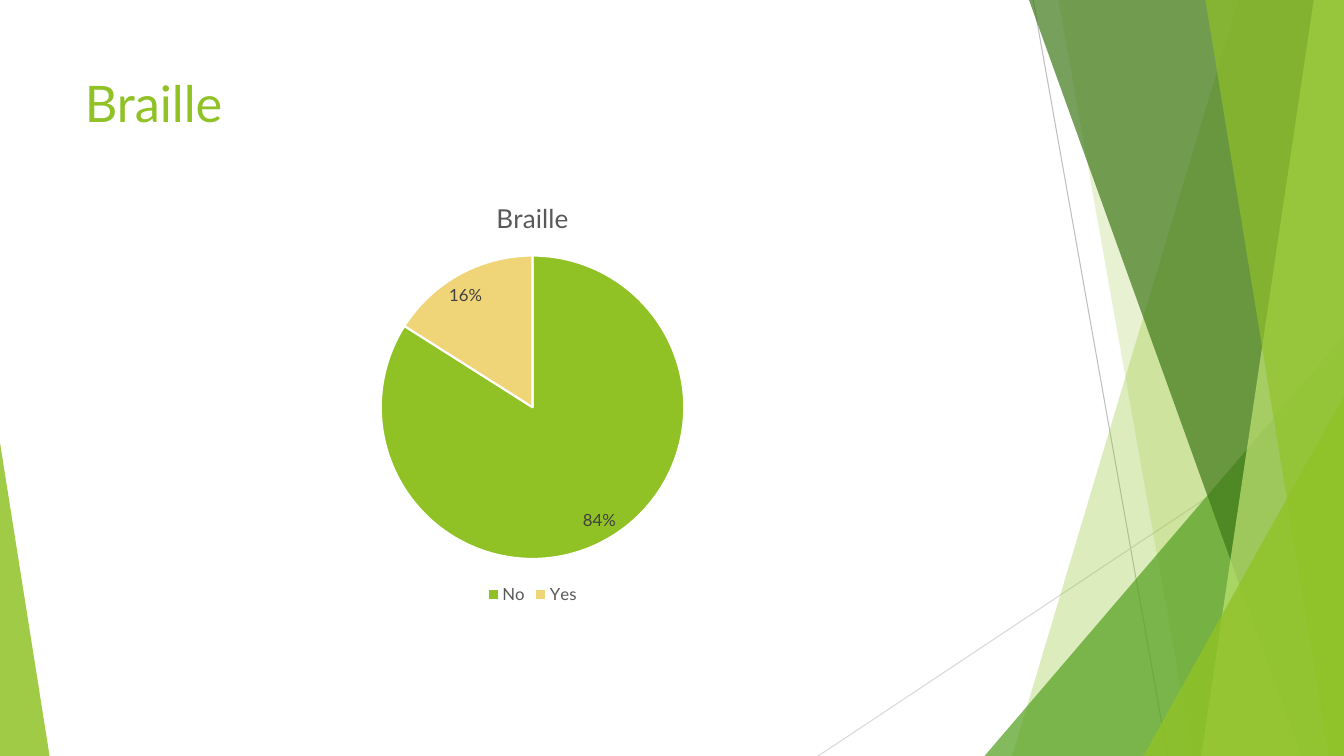
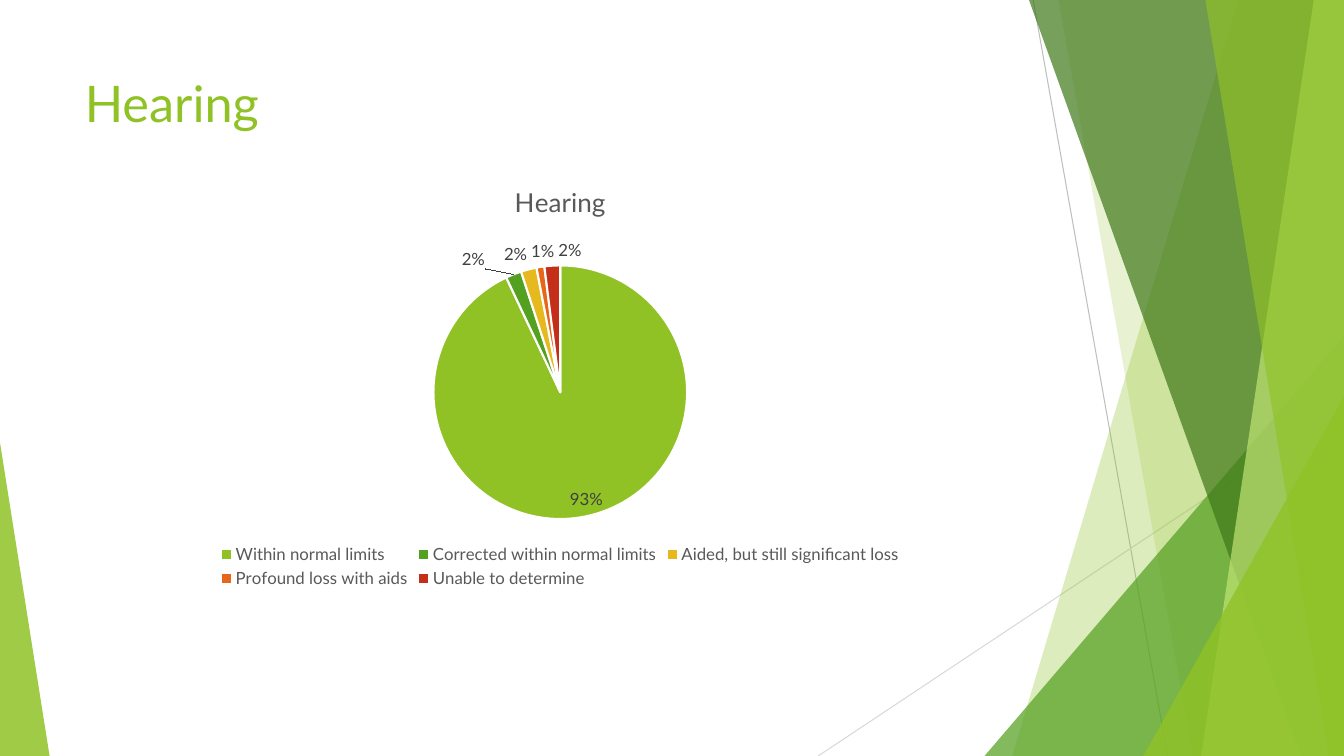
"""Build two survey slides with pie charts over a faceted green layout."""
from dataclasses import dataclass

from lxml import etree
from pptx import Presentation
from pptx.chart.data import CategoryChartData
from pptx.dml.color import RGBColor
from pptx.enum.chart import XL_CHART_TYPE, XL_LABEL_POSITION, XL_LEGEND_POSITION
from pptx.enum.shapes import MSO_CONNECTOR, MSO_SHAPE
from pptx.enum.text import MSO_ANCHOR, MSO_AUTO_SIZE, PP_ALIGN
from pptx.oxml.ns import qn
from pptx.util import Emu, Inches, Pt

PIE = XL_CHART_TYPE.PIE
BEST_FIT = XL_LABEL_POSITION.BEST_FIT
LEGEND_BOTTOM = XL_LEGEND_POSITION.BOTTOM
STRAIGHT = MSO_CONNECTOR.STRAIGHT
TRIANGLE = MSO_SHAPE.ISOSCELES_TRIANGLE
TOP = MSO_ANCHOR.TOP
NO_FIT = MSO_AUTO_SIZE.NONE
LEFT = PP_ALIGN.LEFT

COLS, ROWS = 160, 90
WIDTH, HEIGHT = Inches(13.33), Inches(7.5)
TITLE_ONLY = 5

WHITE = RGBColor(0xFF, 0xFF, 0xFF)
BLACK = RGBColor(0x00, 0x00, 0x00)
LIME = RGBColor(0x90, 0xC2, 0x26)
PALE_LIME = RGBColor(0xC0, 0xE4, 0x74)
GREEN = RGBColor(0x54, 0xA0, 0x21)
DARK_GREEN = RGBColor(0x3F, 0x78, 0x19)
SAND = RGBColor(0xF0, 0xD5, 0x78)
GOLD = RGBColor(0xE6, 0xB9, 0x1E)
ORANGE = RGBColor(0xE7, 0x66, 0x18)
RED = RGBColor(0xC4, 0x2F, 0x1A)
GREY = RGBColor(0x59, 0x59, 0x59)
DARK_GREY = RGBColor(0x40, 0x40, 0x40)
LINE_GREY = RGBColor(0xBF, 0xBF, 0xBF)
LIGHT_GREY = RGBColor(0xD9, 0xD9, 0xD9)

BASE_FONT = {"name": "Lato", "bold": False}
TITLE_FONT = BASE_FONT | {"size": Pt(36)}
CHART_FONT = BASE_FONT | {"size": Pt(10)}
CHART_TITLE_FONT = BASE_FONT | {"size": Pt(18.6)}
LABEL_FONT = BASE_FONT | {"size": Pt(12)}
TITLE_FRAME = {"vertical_anchor": TOP, "auto_size": NO_FIT, "word_wrap": True}
TITLE_BOX = (8.9, 8, 112.8, 17.3)
CHART_SIZE = (112.8, 50.9)


@dataclass(frozen=True)
class Ray:
    start: tuple[float, float]
    end: tuple[float, float]
    color: RGBColor


@dataclass(frozen=True)
class Band:
    top_col: float
    bottom_col: float
    color: RGBColor
    opacity: int


@dataclass(frozen=True)
class Wedge:
    left: float
    right: float
    top: float
    apex: int
    color: RGBColor
    opacity: int


@dataclass(frozen=True)
class Pie:
    title: str
    left: float
    top: float
    slices: tuple[tuple[str, int, RGBColor], ...]


FACETS = (
    Ray((123, 0), (139, ROWS), LINE_GREY),
    Ray((COLS, 48.4), (97.4, ROWS), LIGHT_GREY),
    Band(147.4, 120.5, LIME, 30),
    Band(126, 142, LIME, 20),
    Wedge(117.2, COLS, 40, 1, GREEN, 72),
    Band(122.5, 154.9, DARK_GREEN, 70),
    Band(156.4, 143, PALE_LIME, 70),
    Band(143.5, 158.2, LIME, 65),
    Wedge(136.1, COLS, 47.2, 1, LIME, 80),
    Wedge(0, 5.9, 52.7, 0, LIME, 85),
)

PIES = (
    Pie("Braille", 7, 21.5, (("No", 84, LIME), ("Yes", 16, SAND))),
    Pie("Hearing", 10.3, 19.6, (
        ("Within normal limits", 93, LIME),
        ("Corrected within normal limits", 2, GREEN),
        ("Aided, but still significant loss", 2, GOLD),
        ("Profound loss with aids", 1, ORANGE),
        ("Unable to determine", 2, RED),
    )),
)


def col(n: float) -> Emu:
    return Emu(round(WIDTH * n / COLS))


def row(n: float) -> Emu:
    return Emu(round(HEIGHT * n / ROWS))


def box(left: float, top: float, width: float, height: float) -> tuple:
    return col(left), row(top), col(width), row(height)


def apply(target, values: dict) -> None:
    for name, value in values.items():
        setattr(target, name, value)


def set_font(font, values: dict, color: RGBColor) -> None:
    apply(font, values)
    font.color.rgb = color


def paint(sp, color: RGBColor, opacity: int) -> None:
    sp.shadow.inherit = False
    sp.fill.solid()
    sp.fill.fore_color.rgb = color
    sp.line.fill.background()
    clr = sp.element.spPr.find(f"{qn('a:solidFill')}/{qn('a:srgbClr')}")
    etree.SubElement(clr, qn("a:alpha"), val=str(opacity * 1000))


def draw_ray(shapes, ray: Ray):
    (x1, y1), (x2, y2) = ray.start, ray.end
    line = shapes.add_connector(STRAIGHT, col(x1), row(y1), col(x2), row(y2))
    line.line.color.rgb = ray.color
    line.line.width = Pt(0.75)
    etree.SubElement(line.element.spPr, qn("a:effectLst"))
    return line


def draw_band(shapes, band: Band):
    builder = shapes.build_freeform(col(band.top_col), 0)
    builder.add_line_segments(
        [(WIDTH, 0), (WIDTH, HEIGHT), (col(band.bottom_col), HEIGHT)], close=True)
    sp = builder.convert_to_shape()
    paint(sp, band.color, band.opacity)
    return sp


def draw_wedge(shapes, wedge: Wedge):
    area = box(wedge.left, wedge.top, wedge.right - wedge.left, ROWS - wedge.top)
    sp = shapes.add_shape(TRIANGLE, *area)
    sp.adjustments[0] = wedge.apex
    paint(sp, wedge.color, wedge.opacity)
    return sp


DRAW = {Ray: draw_ray, Band: draw_band, Wedge: draw_wedge}


def prepare_layout(layout) -> None:
    for ph in list(layout.placeholders):
        if ph.placeholder_format.idx:
            ph.element.getparent().remove(ph.element)
        else:
            ph.left, ph.top, ph.width, ph.height = box(*TITLE_BOX)


def move_facets(slide, layout) -> None:
    facets = [DRAW[type(facet)](slide.shapes, facet) for facet in FACETS]
    for sp in facets:
        layout.shapes.element.append(sp.element)


def add_title(slide, text: str) -> None:
    tf = slide.shapes.title.text_frame
    apply(tf, TITLE_FRAME)
    p = tf.paragraphs[0]
    p.alignment = LEFT
    r = p.add_run()
    r.text = text
    set_font(r.font, TITLE_FONT, LIME)


def add_pie(slide, pie: Pie) -> None:
    names, values, colors = zip(*pie.slices)
    data = CategoryChartData()
    data.categories = names
    data.add_series(pie.title, values)
    area = box(pie.left, pie.top, *CHART_SIZE)
    chart = slide.shapes.add_chart(PIE, *area, data).chart
    set_font(chart.font, CHART_FONT, BLACK)

    chart.has_title = True
    r = chart.chart_title.text_frame.paragraphs[0].add_run()
    r.text = pie.title
    set_font(r.font, CHART_TITLE_FONT, GREY)

    chart.has_legend = True
    apply(chart.legend, {"position": LEGEND_BOTTOM, "include_in_layout": False})
    set_font(chart.legend.font, LABEL_FONT, GREY)

    plot = chart.plots[0]
    plot.vary_by_categories = True
    series = plot.series[0]
    for i, color in enumerate(colors):
        fmt = series.points[i].format
        fmt.fill.solid()
        fmt.fill.fore_color.rgb = color
        fmt.line.color.rgb = WHITE
        fmt.line.width = Pt(1.5)

    labels = series.data_labels
    apply(labels, {"show_value": False, "show_percentage": True,
                   "number_format": "0%", "number_format_is_linked": False,
                   "position": BEST_FIT})
    set_font(labels.font, LABEL_FONT, DARK_GREY)


def main() -> None:
    prs = Presentation()
    prs.slide_width, prs.slide_height = WIDTH, HEIGHT
    layout = prs.slide_layouts[TITLE_ONLY]
    prepare_layout(layout)
    slides = [prs.slides.add_slide(layout) for _ in PIES]
    move_facets(slides[0], layout)
    for s, pie in zip(slides, PIES):
        add_title(s, pie.title)
        add_pie(s, pie)
    prs.save("out.pptx")


if __name__ == "__main__":
    main()
